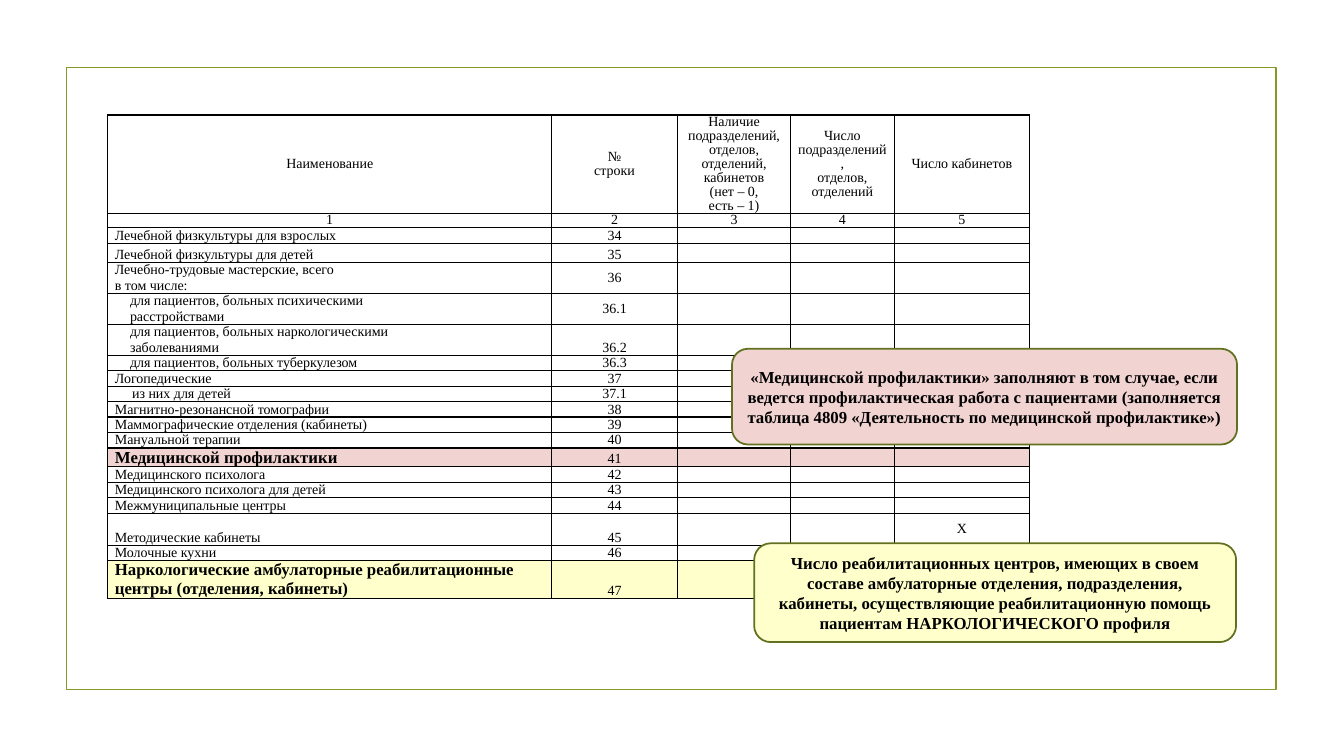
from copy import deepcopy

from lxml import etree
from pptx import Presentation
from pptx.dml import color
from pptx.enum import shapes, text
from pptx.oxml import ns
from pptx.util import Inches, Pt

FONT = "Times New Roman"
PINK, YELLOW, BLACK = "F1D4D2", "FFFFCC", "000000"
CENTER, LEFT = text.PP_ALIGN.CENTER, text.PP_ALIGN.LEFT
TOP, MIDDLE, BOTTOM = (text.MSO_ANCHOR.TOP, text.MSO_ANCHOR.MIDDLE,
                       text.MSO_ANCHOR.BOTTOM)

COLUMN_WIDTHS = [4.4, 1.25, 1.12, 1.03, 1.34]
HEADINGS = [
    "Наименование",
    "№\vстроки",
    "Наличие подразделений,\vотделов, отделений, кабинетов\v(нет – 0,\vесть – 1)",
    "Число\vподразделений,\vотделов,\vотделений",
    "Число кабинетов",
]
# Name, line number, row height, then optional format values
ROWS = [
    ("Лечебной физкультуры для взрослых", "34", 0.15, {}),
    ("Лечебной физкультуры для детей", "35", 0.19, {}),
    ("Лечебно-трудовые мастерские, всего\nв том числе:", "36", 0.3,
     {"number_anchor": MIDDLE}),
    ("для пациентов, больных психическими\vрасстройствами", "36.1", 0.3,
     {"indent": 0.15, "name_anchor": TOP, "number_anchor": MIDDLE}),
    ("для пациентов, больных наркологическими\vзаболеваниями", "36.2", 0.3,
     {"indent": 0.15, "name_anchor": TOP}),
    ("для пациентов, больных туберкулезом", "36.3", 0.15,
     {"indent": 0.15, "name_anchor": TOP}),
    ("Логопедические", "37", 0.15, {}),
    ("из них для детей", "37.1", 0.15, {"indent": 0.17}),
    ("Магнитно-резонансной томографии", "38", 0.15, {}),
    ("Маммографические отделения (кабинеты)", "39", 0.15, {}),
    ("Мануальной терапии", "40", 0.15, {}),
    ("Медицинской профилактики", "41", 0.18, {"fill": PINK}),
    ("Медицинского психолога", "42", 0.15, {}),
    ("Медицинского психолога для детей", "43", 0.15, {}),
    ("Межмуниципальные центры", "44", 0.15, {}),
    ("Методические кабинеты", "45", 0.32, {"rooms": "Х"}),
    ("Молочные кухни", "46", 0.15, {"rooms": "Х"}),
    ("Наркологические амбулаторные реабилитационные центры (отделения, кабинеты)",
     "47", 0.37, {"fill": YELLOW}),
]
CALLOUTS = [
    ((7.26, 3.46, 5.01, 0.95), PINK,
     "«Медицинской профилактики» заполняют в том случае, если ведется "
     "профилактическая работа с пациентами (заполняется таблица 4809 "
     "«Деятельность по медицинской профилактике»)"),
    ((7.48, 5.39, 4.78, 0.98), YELLOW,
     "Число реабилитационных центров, имеющих в своем составе амбулаторные "
     "отделения, подразделения, кабинеты, осуществляющие реабилитационную "
     "помощь пациентам НАРКОЛОГИЧЕСКОГО профиля"),
]


def rgb(value):
    return color.RGBColor.from_string(value)


def assign(target, values):
    for name, value in values.items():
        setattr(target, name, value)


def write(frame, content, size=10, bold=False, **paragraph_format):
    frame.text = content
    for para in frame.paragraphs:
        assign(para, paragraph_format)
        for span in para.runs:
            assign(span.font, {"name": FONT, "size": Pt(size), "bold": bold})
            span.font.color.rgb = rgb(BLACK)
        # Line breaks and empty paragraphs need the font and size too
        for line_break in para._p.findall(ns.qn("a:br")):
            line_break.append(deepcopy(para.runs[0].font._element))
        if not para.runs:
            end = etree.SubElement(para._p, ns.qn("a:endParaRPr"), sz=str(size * 100))
            etree.SubElement(end, ns.qn("a:latin"), typeface=FONT)


def add_borders(cell):
    properties = cell._tc.get_or_add_tcPr()
    for side in ("lnL", "lnR", "lnT", "lnB"):
        line = etree.SubElement(properties, ns.qn("a:" + side), w=str(Pt(1)))
        fill = etree.SubElement(line, ns.qn("a:solidFill"))
        etree.SubElement(fill, ns.qn("a:srgbClr"), val=BLACK)


def fill_cell(cell, content, anchor=BOTTOM, fill=None, indent=0, **text_format):
    assign(cell, {"margin_left": Inches(0.07 + indent), "margin_right": Inches(0.07),
                  "margin_top": 0, "margin_bottom": 0, "vertical_anchor": anchor})
    write(cell.text_frame, content, **text_format)
    add_borders(cell)
    if fill:
        cell.fill.solid()
        cell.fill.fore_color.rgb = rgb(fill)
    else:
        cell.fill.background()


def add_register(page):
    heights = [0.98, 0.14] + [row[2] for row in ROWS]
    table = page.shapes.add_table(
        len(heights), len(COLUMN_WIDTHS), Inches(1.07), Inches(1.14),
        Inches(sum(COLUMN_WIDTHS)), Inches(sum(heights))).table
    assign(table, {"first_row": False, "horz_banding": False})
    for column, width in zip(table.columns, COLUMN_WIDTHS):
        column.width = Inches(width)
    for row, height in zip(table.rows, heights):
        row.height = Inches(height)

    # Headings and column numbers
    heading_format = {"alignment": CENTER, "line_spacing": Pt(10)}
    for index, heading in enumerate(HEADINGS):
        fill_cell(table.cell(0, index), heading, MIDDLE, **heading_format)
        fill_cell(table.cell(1, index), str(index + 1),
                  BOTTOM if index < 3 else TOP, **heading_format)

    # Body
    for index, (name, number, _, style) in enumerate(ROWS, start=2):
        fill = style.get("fill")
        fill_cell(table.cell(index, 0), name, style.get("name_anchor", BOTTOM), fill,
                  style.get("indent", 0), size=12 if fill else 10,
                  bold=bool(fill), alignment=LEFT)
        fill_cell(table.cell(index, 1), number, style.get("number_anchor", BOTTOM),
                  fill, alignment=CENTER)
        for column, value in enumerate(["", "", style.get("rooms", "")], start=2):
            fill_cell(table.cell(index, column), value, MIDDLE, fill, alignment=CENTER)


def add_panel(page, kind, place, line, fill=None):
    panel = page.shapes.add_shape(kind, *map(Inches, place))
    panel.shadow.inherit = False
    panel.line.color.rgb = rgb(line)
    panel.line.width = Pt(1.25)
    if fill:
        panel.fill.solid()
        panel.fill.fore_color.rgb = rgb(fill)
    else:
        panel.fill.background()
    return panel


def add_callout(page, place, fill, content):
    panel = add_panel(page, shapes.MSO_SHAPE.ROUNDED_RECTANGLE, place, "61711F", fill)
    assign(panel.text_frame, {"word_wrap": True, "vertical_anchor": MIDDLE})
    write(panel.text_frame, content, size=12, bold=True, alignment=CENTER)


def main():
    deck = Presentation()
    assign(deck, {"slide_width": Inches(13.33), "slide_height": Inches(7.5)})
    page = deck.slides.add_slide(deck.slide_layouts[6])

    # Frame, table and notes over it
    add_panel(page, shapes.MSO_SHAPE.RECTANGLE, (0.66, 0.67, 12, 6.17), "83992A")
    add_register(page)
    for place, fill, content in CALLOUTS:
        add_callout(page, place, fill, content)
    deck.save("out.pptx")


if __name__ == "__main__":
    main()
